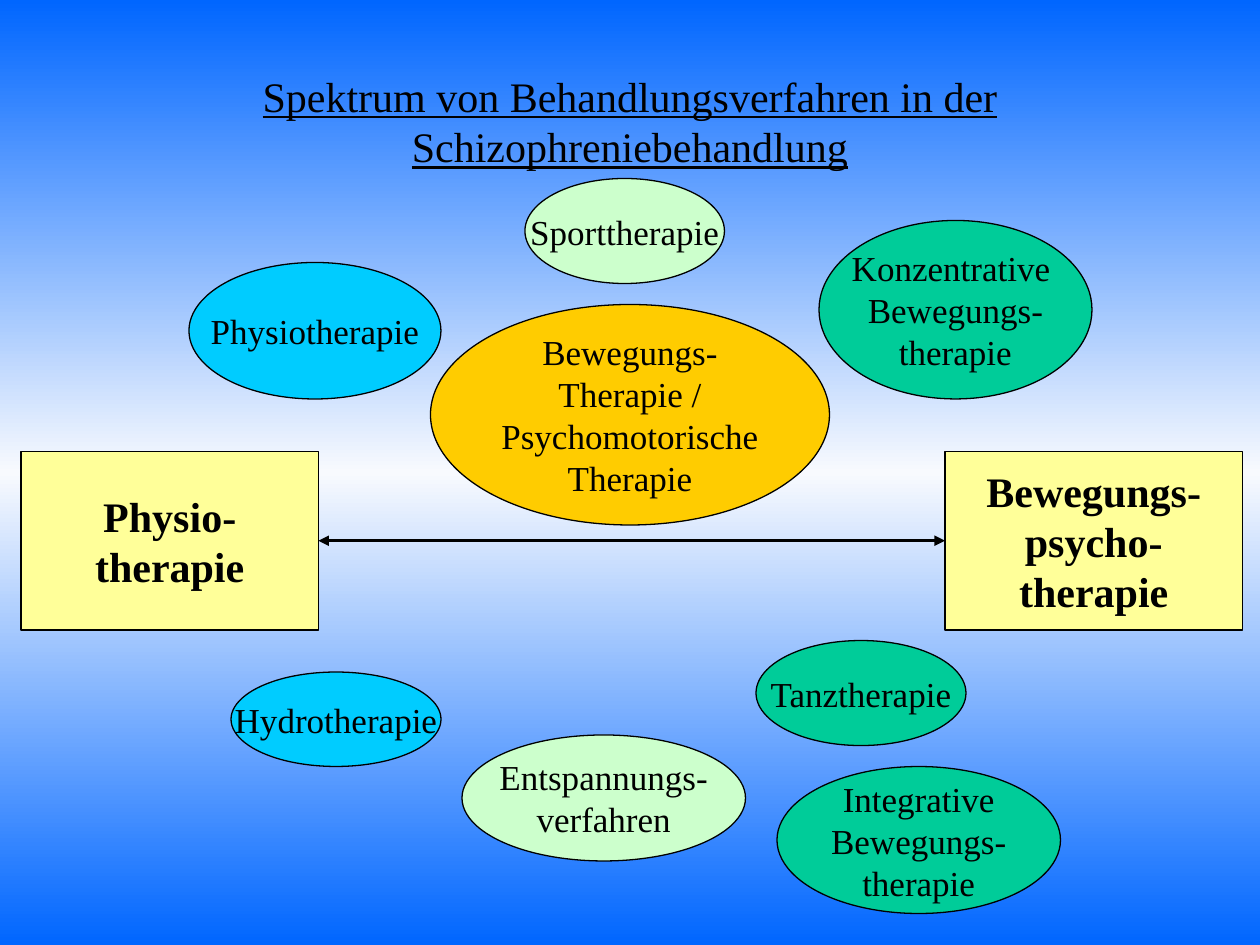
import copy
from typing import NamedTuple

import pptx
import pptx.dml.color
import pptx.enum.shapes
import pptx.enum.text
import pptx.oxml
import pptx.oxml.ns
import pptx.util

COLS, ROWS = 120, 90
WIDTH, HEIGHT = pptx.util.Inches(10), pptx.util.Inches(7.5)
FONT = "Times New Roman"
BLACK, BLUE, WHITE = "000000", "0066FF", "F8FAFE"
MINT, GREEN, SKY, GOLD, CREAM = "CCFFCC", "00CC99", "00CCFF", "FFCC00", "FFFF99"
OVAL = pptx.enum.shapes.MSO_SHAPE.OVAL
RECT = pptx.enum.shapes.MSO_SHAPE.RECTANGLE


class Node(NamedTuple):
    text: str
    col: float
    row: float
    cols: float
    rows: float
    fill: str


THERAPIES = [
    Node("Sporttherapie", 50, 17, 19, 10, MINT),
    Node("Konzentrative \nBewegungs-\ntherapie", 78, 21, 26, 17, GREEN),
    Node("Bewegungs-\nTherapie /\nPsychomotorische\nTherapie", 41, 29, 38, 21, GOLD),
    Node("Physiotherapie", 18, 25, 24, 13, SKY),
    Node("Hydrotherapie", 22, 64, 20, 9, SKY),
    Node("Integrative\nBewegungs-\ntherapie", 74, 73, 27, 14, GREEN),
    Node("Tanztherapie", 72, 61, 20, 10, GREEN),
    Node("Entspannungs-\nverfahren", 44, 70, 27, 12, MINT),
]
POLES = [
    Node("Physio-\ntherapie", 2, 43, 28.33, 17, CREAM),
    Node("Bewegungs-\npsycho-\ntherapie", 90, 43, 28.33, 17, CREAM),
]


def color(code: str):
    return pptx.dml.color.RGBColor.from_string(code)


def place(col: float, row: float, cols: float, rows: float) -> list[int]:
    """Turn grid units into left, top, width and height."""
    return [round(WIDTH * col / COLS), round(HEIGHT * row / ROWS),
            round(WIDTH * cols / COLS), round(HEIGHT * rows / ROWS)]


def write(shape, text: str, *, size: float = 20, bold: bool = False,
          under: bool = False, wrap: bool = False) -> None:
    frame = shape.text_frame
    frame.text = text
    frame.word_wrap = wrap
    frame.vertical_anchor = pptx.enum.text.MSO_ANCHOR.MIDDLE
    for para in frame.paragraphs:
        para.alignment = pptx.enum.text.PP_ALIGN.CENTER
        for run in para.runs:
            font = run.font
            font.name, font.size = FONT, pptx.util.Pt(size)
            font.bold, font.underline = bold, under
            font.color.rgb = color(BLACK)


def draw(slide, node: Node, kind, **style):
    shape = slide.shapes.add_shape(
        kind, *place(node.col, node.row, node.cols, node.rows))
    shape.shadow.inherit = False
    shape.fill.solid()
    shape.fill.fore_color.rgb = color(node.fill)
    shape.line.color.rgb = color(BLACK)
    shape.line.width = pptx.util.Pt(0.75)
    write(shape, node.text, **style)
    return shape


def join(slide, left, right) -> None:
    """Link two boxes with a double-headed arrow."""
    kind = pptx.enum.shapes.MSO_CONNECTOR.STRAIGHT
    arrow = slide.shapes.add_connector(kind, 0, 0, 0, 0)
    arrow.begin_connect(left, 3)
    arrow.end_connect(right, 1)
    arrow.line.color.rgb = color(BLACK)
    arrow.line.width = pptx.util.Pt(2)
    line = arrow.line._get_or_add_ln()
    for end in ("a:headEnd", "a:tailEnd"):
        tip = pptx.oxml.parse_xml(f'<{end} {pptx.oxml.ns.nsdecls("a")} type="triangle"/>')
        line.append(tip)
    line.addnext(pptx.oxml.parse_xml(f'<a:effectLst {pptx.oxml.ns.nsdecls("a")}/>'))


def paint(slide) -> None:
    """Fill the background with blue, fading to white at mid-height."""
    fill = slide.background.fill
    fill.gradient()
    fill.gradient_angle = 270
    stops = slide.element.xpath(".//p:bg//a:gsLst")[0]
    stops.insert(1, copy.deepcopy(stops[0]))
    for stop, code, share in zip(fill.gradient_stops, (BLUE, WHITE, BLUE), (0, 0.5, 1)):
        stop.color.rgb = color(code)
        stop.position = share


def main() -> None:
    deck = pptx.Presentation()
    deck.slide_width, deck.slide_height = WIDTH, HEIGHT
    slide = deck.slides.add_slide(deck.slide_layouts.get_by_name("Title Only"))
    paint(slide)
    title = slide.shapes.title
    title.left, title.top, title.width, title.height = place(9, 6, 102, 11)
    write(title, "Spektrum von Behandlungsverfahren in der Schizophreniebehandlung",
          size=24, under=True, wrap=True)
    for node in THERAPIES:
        draw(slide, node, OVAL)
    left, right = [draw(slide, node, RECT, size=24, bold=True) for node in POLES]
    join(slide, left, right)
    deck.save("out.pptx")


if __name__ == "__main__":
    main()
